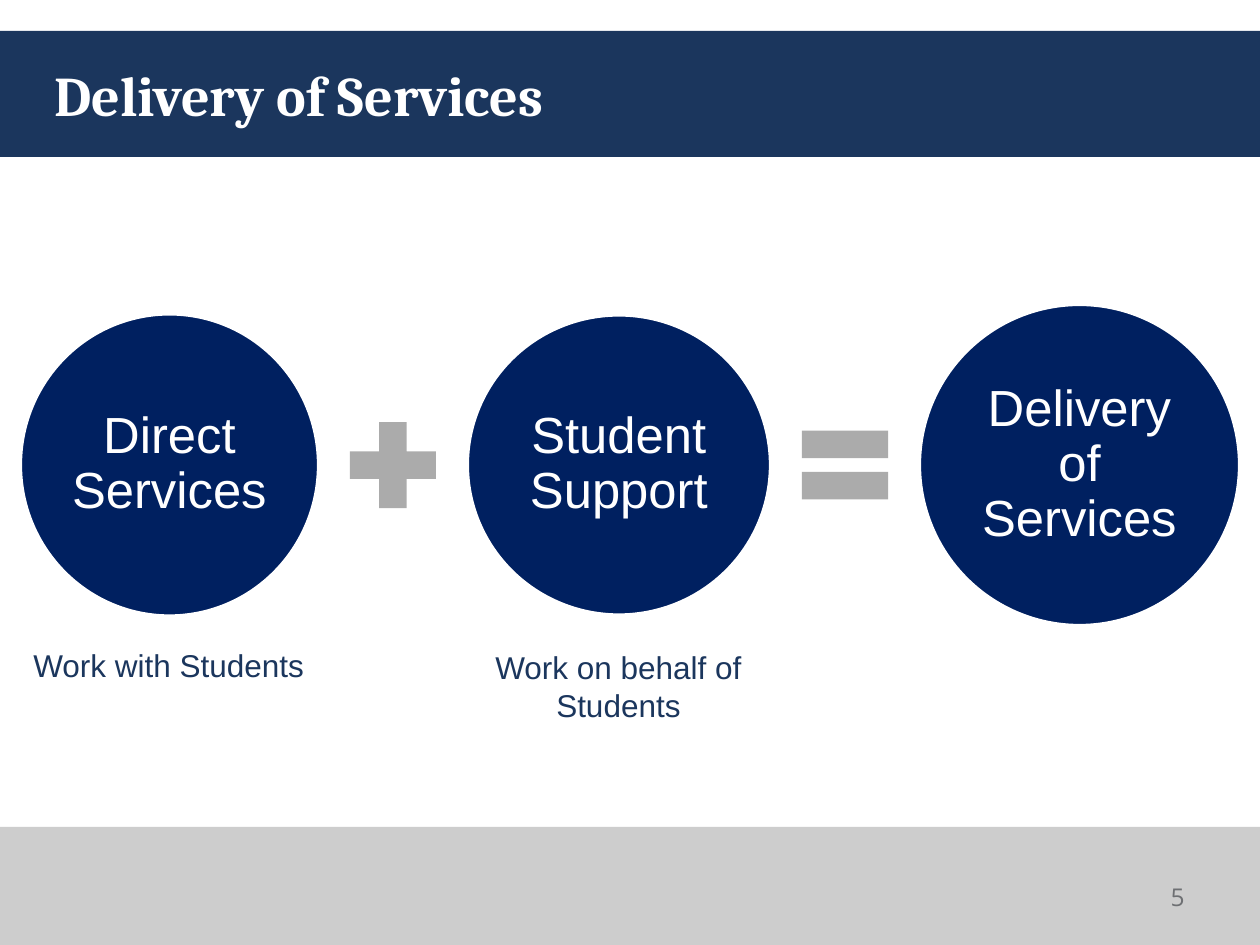
from dataclasses import dataclass

from pptx import Presentation
from pptx.dml.color import RGBColor as RGB
from pptx.enum.shapes import MSO_SHAPE as Shape
from pptx.enum.text import MSO_ANCHOR as Anchor, PP_ALIGN as Align
from pptx.util import Emu, Pt

SCALE = 914400 / 126


@dataclass(frozen=True)
class Theme:
    navy: str = "1B365D"
    deep: str = "002060"
    band: str = "CDCDCD"
    sign: str = "ABABAB"
    grey: str = "6E7073"
    white: str = "FFFFFF"
    head: int = 32
    disc: int = 29
    note: int = 18
    page: int = 14


THEME = Theme()


def px(*nums):
    return [Emu(round(n * SCALE)) for n in nums]


def assign(obj, fmt):
    for key, val in fmt.items():
        setattr(obj, key, val)


def write(shape, text, font, color, align=Align.LEFT, para=None, **frame):
    body = shape.text_frame
    assign(body, {"word_wrap": True, **frame})
    line = body.paragraphs[0]
    line.text = text
    assign(line, {"alignment": align, **(para or {})})
    assign(line.runs[0].font, font)
    line.runs[0].font.color.rgb = RGB.from_string(color)


def label(slide, box, *args, **kwargs):
    write(slide.shapes.add_textbox(*px(*box)), *args, **kwargs)


def draw(slide, kind, box, fill, line=None):
    shape = slide.shapes.add_shape(kind, *px(*box))
    shape.shadow.inherit = False
    shape.fill.solid()
    shape.fill.fore_color.rgb = RGB.from_string(fill)
    if line:
        shape.line.color.rgb = RGB.from_string(line)
        shape.line.width = Pt(1.25)
    else:
        shape.line.fill.background()
    return shape


def header(slide, box, title):
    x, y, w, h = box
    draw(slide, Shape.RECTANGLE, box, THEME.navy)
    font = {"name": "Cambria", "size": Pt(THEME.head), "bold": True}
    label(slide, (x + 42, y, w - 116, h), title, font, THEME.white,
          vertical_anchor=Anchor.MIDDLE)


def footer(slide, box, number):
    x, y, w, h = box
    draw(slide, Shape.RECTANGLE, box, THEME.band)
    font = {"name": "Open Sans", "size": Pt(THEME.page)}
    label(slide, (x + w - 126, y + 49, 63, 50), number, font, THEME.grey, Align.RIGHT)


def sum_row(slide, box, parts):
    """Spread the parts evenly across the box, centred on its middle line."""
    x, y, w, h = box
    gap = (w - sum(part[1] for part in parts)) / (len(parts) - 1)
    font = {"name": "Arial", "size": Pt(THEME.disc)}
    pad = px(5)[0]
    inset = {f"margin_{side}": pad for side in ("left", "right", "top", "bottom")}
    for kind, wide, high, text in parts:
        spot = (x, y + (h - high) / 2, wide, high)
        if text:
            disc = draw(slide, kind, spot, THEME.deep, THEME.white)
            write(disc, text, font, THEME.white, Align.CENTER, {"line_spacing": 0.9},
                  vertical_anchor=Anchor.MIDDLE, **inset)
        else:
            draw(slide, kind, spot, THEME.sign)
        x += wide + gap


def notes(slide, box, items):
    x, y, w, h = box
    font = {"name": "Arial", "size": Pt(THEME.note)}
    for left, top, high, align, text in items:
        label(slide, (x + left, y + top, w, high), text, font, THEME.navy, align)


def main():
    deck = Presentation()
    deck.slide_width, deck.slide_height = px(1260, 945)
    slide = deck.slides.add_slide(deck.slide_layouts[6])

    # Title band and page number
    header(slide, (0, 31, 1260, 126), "Delivery of Services")
    footer(slide, (0, 827, 1260, 118), "5")

    # Services as a sum
    sum_row(slide, (21, 305, 1218, 320), [
        (Shape.OVAL, 297, 301, "Direct Services"),
        (Shape.MATH_PLUS, 117, 117, None),
        (Shape.OVAL, 302, 299, "Student Support"),
        (Shape.MATH_EQUAL, 117, 117, None),
        (Shape.OVAL, 319, 320, "Delivery of Services"),
    ])

    # Captions below the first two circles
    notes(slide, (21, 640, 325, 90), [
        (0, 0, 50, Align.LEFT, "Work with Students"),
        (435, 2, 90, Align.CENTER, "Work on behalf of Students"),
    ])

    deck.save("out.pptx")


if __name__ == "__main__":
    main()
